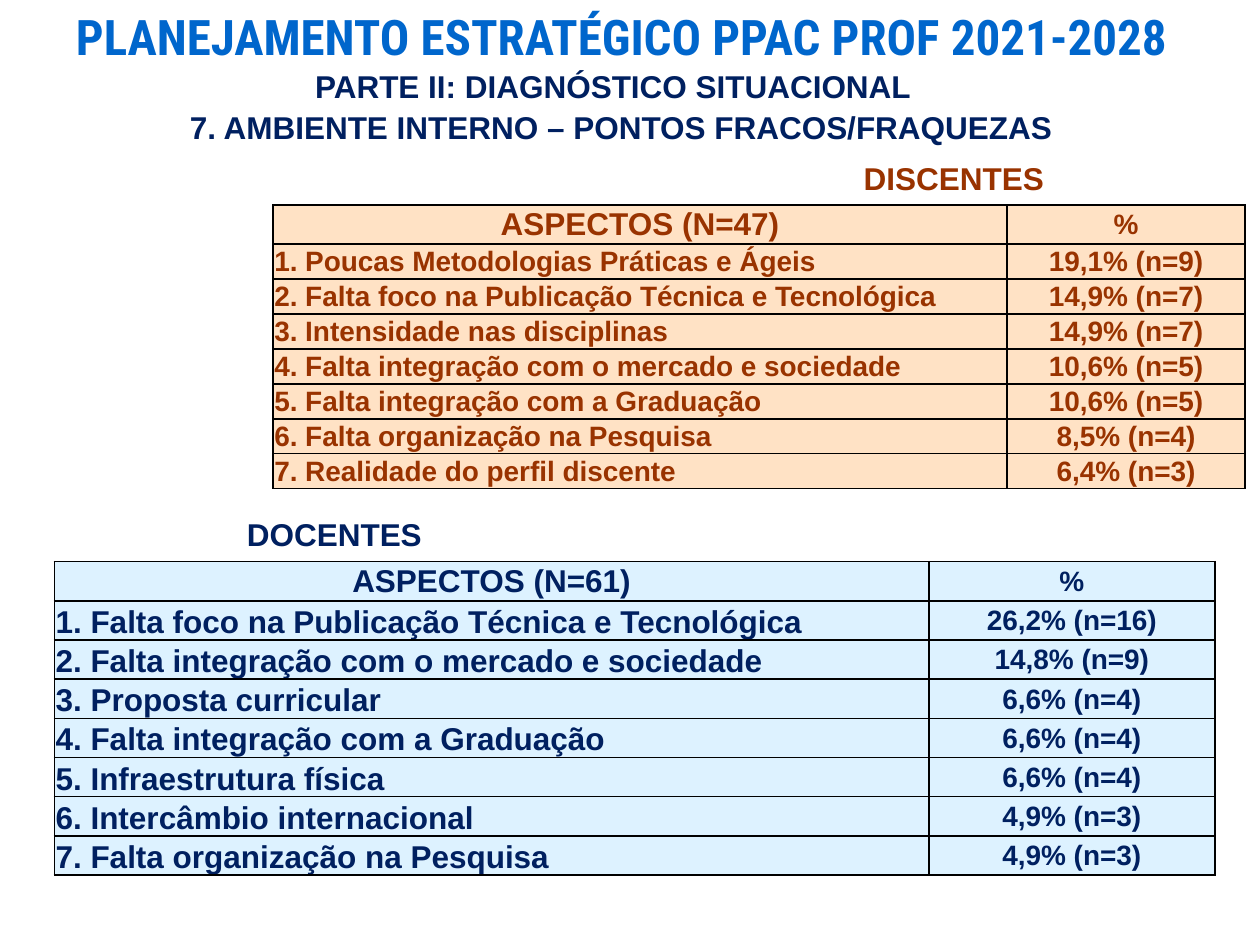
from dataclasses import dataclass

from lxml import etree
from pptx import Presentation
from pptx import util as u
from pptx.dml.color import RGBColor
from pptx.enum import text
from pptx.oxml import ns

Pt = u.Pt

BLUE = RGBColor(0x00, 0x66, 0xCC)
PALE_BLUE = RGBColor(0x99, 0xCC, 0xFF)
NAVY = RGBColor(0x00, 0x20, 0x60)
BROWN = RGBColor(0x99, 0x33, 0x00)
PEACH = RGBColor(0xFF, 0xE2, 0xC5)
ICE = RGBColor(0xDD, 0xF2, 0xFF)
BLACK = RGBColor(0, 0, 0)

CENTER = text.PP_ALIGN.CENTER
LEFT = text.PP_ALIGN.LEFT
MIDDLE = text.MSO_ANCHOR.MIDDLE
BOTTOM = text.MSO_ANCHOR.BOTTOM


@dataclass
class Heading:
    text: str
    left: float
    top: float
    width: float
    color: RGBColor = NAVY
    height: float = 29
    size: float = 18
    font: str = "Arial"
    align: text.PP_ALIGN = LEFT
    wrap: bool = False


@dataclass
class Survey:
    left: float
    top: float
    widths: tuple[float, float]
    header_height: float
    row_height: float
    color: RGBColor
    fill: RGBColor
    aspect_size: float
    aspect_anchor: text.MSO_ANCHOR
    total: int
    rows: list[tuple[str, str]]


TITLE = Heading("PLANEJAMENTO ESTRATÉGICO PPAC PROF 2021-2028", 35, 0, 640, BLUE,
                height=34, size=28, font="Roboto Condensed", align=CENTER)

HEADINGS = [
    Heading("PARTE II: DIAGNÓSTICO SITUACIONAL", 173, 34.5, 358.5),
    Heading("DISCENTES", 486.5, 87.5, 119, BROWN),
    Heading("7. AMBIENTE INTERNO – PONTOS FRACOS/FRAQUEZAS", 95.75, 58, 518.5,
            align=CENTER, wrap=True),
    Heading("DOCENTES", 134, 291, 115),
]

STUDENTS = Survey(156, 117, (419.5, 136), 22.3, 20, BROWN, PEACH, 16, MIDDLE, 47, [
    ("Poucas Metodologias Práticas e Ágeis", "19,1% (n=9)"),
    ("Falta foco na Publicação Técnica e Tecnológica", "14,9% (n=7)"),
    ("Intensidade nas disciplinas", "14,9% (n=7)"),
    ("Falta integração com o mercado e sociedade", "10,6% (n=5)"),
    ("Falta integração com a Graduação", "10,6% (n=5)"),
    ("Falta organização na Pesquisa", "8,5% (n=4)"),
    ("Realidade do perfil discente", "6,4% (n=3)"),
])

TEACHERS = Survey(31, 320.9, (499.75, 163.5), 22.4, 22.4, NAVY, ICE, 18, BOTTOM, 61, [
    ("Falta foco na Publicação Técnica e Tecnológica", "26,2% (n=16)"),
    ("Falta integração com o mercado e sociedade", "14,8% (n=9)"),
    ("Proposta curricular", "6,6% (n=4)"),
    ("Falta integração com a Graduação", "6,6% (n=4)"),
    ("Infraestrutura física", "6,6% (n=4)"),
    ("Intercâmbio internacional", "4,9% (n=3)"),
    ("Falta organização na Pesquisa", "4,9% (n=3)"),
])


def write(tf, words: str, size: float, color: RGBColor, align, font: str = "Arial"):
    """Put one bold line in a text frame and return its run."""
    tf.text = words
    p = tf.paragraphs[0]
    p.alignment = align
    r = p.runs[0]
    r.font.name = font
    r.font.size = Pt(size)
    r.font.bold = True
    r.font.color.rgb = color
    return r


def make_line(tag: str, width: float, color: RGBColor):
    """Build a solid line element, for a cell border or a text outline."""
    ln = etree.Element(ns.qn(tag), w=str(Pt(width)))
    fill = etree.SubElement(ln, ns.qn("a:solidFill"))
    etree.SubElement(fill, ns.qn("a:srgbClr"), val=str(color))
    return ln


def add_heading(s, h: Heading):
    sp = s.shapes.add_textbox(Pt(h.left), Pt(h.top), Pt(h.width), Pt(h.height))
    tf = sp.text_frame
    tf.word_wrap = h.wrap
    return write(tf, h.text, h.size, h.color, h.align, h.font)


def fill_cell(cell, words: str, size: float, survey: Survey, align, anchor) -> None:
    write(cell.text_frame, words, size, survey.color, align)
    cell.vertical_anchor = anchor
    cell.margin_left = cell.margin_right = cell.margin_top = Pt(0.75)
    cell.margin_bottom = 0
    cell.fill.solid()
    cell.fill.fore_color.rgb = survey.fill
    tc_pr = cell._tc.get_or_add_tcPr()
    for i, side in enumerate("LRTB"):
        tc_pr.insert(i, make_line(f"a:ln{side}", 1, BLACK))


def add_survey(s, survey: Survey) -> None:
    count = len(survey.rows)
    height = survey.header_height + count * survey.row_height
    frame = s.shapes.add_table(count + 1, 2, Pt(survey.left), Pt(survey.top),
                               Pt(sum(survey.widths)), Pt(height))
    table = frame.table
    table.first_row = table.horz_banding = False
    for column, width in zip(table.columns, survey.widths):
        column.width = Pt(width)
    for row in table.rows:
        row.height = Pt(survey.row_height)
    table.rows[0].height = Pt(survey.header_height)

    fill_cell(table.cell(0, 0), f"ASPECTOS (N={survey.total})", 18, survey, CENTER, MIDDLE)
    fill_cell(table.cell(0, 1), "%", 16, survey, CENTER, MIDDLE)
    for i, (aspect, share) in enumerate(survey.rows, 1):
        fill_cell(table.cell(i, 0), f"{i}. {aspect}", survey.aspect_size, survey,
                  LEFT, survey.aspect_anchor)
        fill_cell(table.cell(i, 1), share, 16, survey, CENTER, MIDDLE)


def main() -> None:
    prs = Presentation()
    prs.slide_width, prs.slide_height = Pt(720), Pt(540)
    s = prs.slides.add_slide(prs.slide_layouts[6])

    # Title with a pale outline
    r = add_heading(s, TITLE)
    r.font._element.insert(0, make_line("a:ln", 1.5, PALE_BLUE))

    # Subtitles and table captions
    for h in HEADINGS:
        add_heading(s, h)

    # Weak points named by students and by teachers
    for survey in (STUDENTS, TEACHERS):
        add_survey(s, survey)

    prs.save("out.pptx")


if __name__ == "__main__":
    main()
